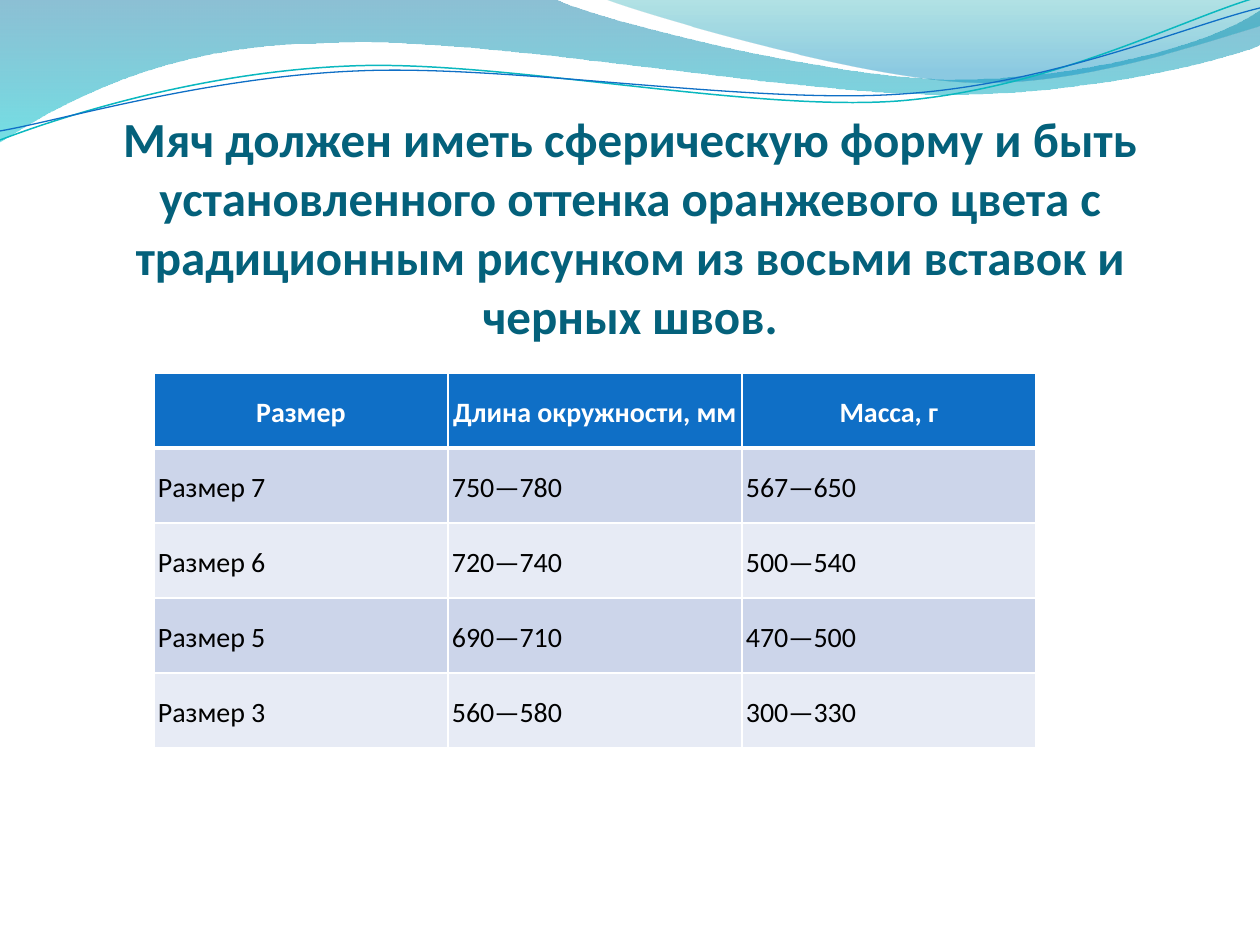
from lxml.etree import SubElement
from pptx import Presentation
from pptx.dml.color import RGBColor
from pptx.enum.text import MSO_ANCHOR as Anchor, MSO_AUTO_SIZE as AutoSize, PP_ALIGN as Align
from pptx.oxml.ns import qn
from pptx.util import Emu, Pt

EMU_PER_PX = 914400 / 126

TITLE = ("Мяч должен иметь сферическую форму и быть установленного оттенка "
         "оранжевого цвета с традиционным рисунком из восьми вставок и черных швов.")
BALL_SIZES = [
    ["Размер", "Длина окружности, мм", "Масса, г"],
    ["Размер 7", "750—780", "567—650"],
    ["Размер 6", "720—740", "500—540"],
    ["Размер 5", "690—710", "470—500"],
    ["Размер 3", "560—580", "300—330"],
]

# Each segment is one point for a line or three points for a Bézier curve.
LEFT_WAVE = [
    [(0, -1)], [(554, -1)],
    [(600, 21), (837, 79), (955, 79)], [(1075, 79), (1207, 47), (1260, 11)],
    [(1261, 45)],
    [(1239, 55), (1096, 96), (940, 94)], [(784, 94), (481, 35), (324, 43)],
    [(163, 44), (58, 105), (-1, 142)],
]
RIGHT_WAVE = [
    [(604, -1)],
    [(641, 14), (859, 78), (969, 82)], [(1079, 87), (1211, 40), (1260, 26)],
    [(1260, 0)],
]
TEAL_LINE = [
    [(0, 140)],
    [(60, 117), (199, 72), (349, 66)], [(498, 59), (747, 112), (898, 101)],
    [(1050, 89), (1182, 19), (1258, -3)],
]
BLUE_LINE = [
    [(0, 131)],
    [(59, 121), (207, 77), (357, 71)], [(508, 64), (752, 105), (903, 94)],
    [(1053, 84), (1186, 26), (1260, 8)],
]


def px(length):
    return Emu(round(length * EMU_PER_PX))


def rgb(color):
    return RGBColor.from_string(color)


class SlideBuilder:
    font = "Calibri"
    title_color = "04617B"
    header_fill = "0F6FC6"
    band_fills = ["E7EBF5", "CCD5EA"]
    border_color = "FFFFFF"

    def __init__(self, slide):
        self.slide = slide

    def format_runs(self, paragraph, size, color, bold):
        for run in paragraph.runs:
            run.font.name = self.font
            run.font.size = Pt(size)
            run.font.bold = bold
            run.font.color.rgb = rgb(color)

    def curve(self, segments, closed):
        """Draw the outline as lines, then turn its three-point segments into curves."""
        points = [point for segment in segments for point in segment]
        builder = self.slide.shapes.build_freeform(*points[0], scale=EMU_PER_PX)
        builder.add_line_segments(points[1:], close=closed)
        shape = builder.convert_to_shape()
        shape.shadow.inherit = False
        steps = iter(list(shape._element.iter(qn("a:lnTo"))))
        for segment in segments[1:]:
            first, *others = [next(steps) for _ in segment]
            if others:
                first.tag = qn("a:cubicBezTo")
                for step in others:
                    first.append(step[0])
                    step.getparent().remove(step)
        return shape

    def wave(self, segments, stops):
        """Fill a shape from top to bottom; stops are (position, colour, opacity %)."""
        shape = self.curve(segments, closed=True)
        shape.line.fill.background()
        shape.fill.gradient()
        shape.fill.gradient_angle = 270
        for stop, (position, color, opacity) in zip(shape.fill.gradient_stops, stops):
            stop.position = position
            stop.color.rgb = rgb(color)
        for node, (_, _, opacity) in zip(shape._element.spPr.iter(qn("a:srgbClr")), stops):
            SubElement(node, qn("a:alpha"), val=str(opacity * 1000))

    def wave_line(self, segments, color, width):
        shape = self.curve(segments, closed=False)
        shape.fill.background()
        shape.line.color.rgb = rgb(color)
        shape.line.width = Pt(width)

    def title(self, text, left, top, width, height):
        title = self.slide.shapes.title
        self.slide.shapes._spTree.append(title._element)  # in front of the waves
        title.left, title.top, title.width, title.height = map(px, (left, top, width, height))
        frame = title.text_frame
        frame.text = text
        frame.word_wrap = True
        frame.auto_size = AutoSize.NONE
        frame.vertical_anchor = Anchor.BOTTOM
        frame.margin_left = frame.margin_right = frame.margin_bottom = 0
        frame.margin_top = px(6)
        frame.paragraphs[0].alignment = Align.CENTER
        self.format_runs(frame.paragraphs[0], 28, self.title_color, True)

    def cell_borders(self, cell, widths):
        """Widths are in points, keyed by side: L, R, T, B."""
        properties = cell._tc.get_or_add_tcPr()
        for side, width in widths.items():
            line = SubElement(properties, qn(f"a:ln{side}"), w=str(Pt(width)))
            SubElement(SubElement(line, qn("a:solidFill")), qn("a:srgbClr"), val=self.border_color)

    def table(self, rows, left, top, column_width, row_height):
        columns = len(rows[0])
        table = self.slide.shapes.add_table(
            len(rows), columns, px(left), px(top),
            px(column_width * columns), px(row_height * len(rows))).table
        for column in table.columns:
            column.width = px(column_width)
        for r, values in enumerate(rows):
            table.rows[r].height = px(row_height)
            for c, value in enumerate(values):
                self.table_cell(table.cell(r, c), value, r)

    def table_cell(self, cell, value, row):
        header = row == 0
        self.cell_borders(cell, {"L": 1, "R": 1, "T": 3 if row == 1 else 1, "B": 3 if header else 1})
        cell.fill.solid()
        cell.fill.fore_color.rgb = rgb(self.header_fill if header else self.band_fills[row % 2])
        cell.margin_left = cell.margin_right = px(4)
        cell.margin_top = cell.margin_bottom = px(1)
        cell.vertical_anchor = Anchor.MIDDLE
        cell.text_frame.text = value
        paragraph = cell.text_frame.paragraphs[0]
        paragraph.alignment = Align.CENTER if header else Align.LEFT
        paragraph.line_spacing = 1.15
        paragraph.space_after = Pt(10)
        self.format_runs(paragraph, 16, "FFFFFF" if header else "000000", header)


def main():
    deck = Presentation()
    deck.slide_width, deck.slide_height = px(1260), px(945)
    title_only = deck.slide_layouts[5]
    builder = SlideBuilder(deck.slides.add_slide(title_only))

    builder.wave(LEFT_WAVE, [(0, "0074A1", 45), (1, "00C6CF", 55)])
    builder.wave(RIGHT_WAVE, [(0, "00A1A9", 30), (0.8, "008BBF", 45)])
    builder.wave_line(TEAL_LINE, "0AB8BF", 0.85)
    builder.wave_line(BLUE_LINE, "0F6FC6", 0.75)
    builder.title(TITLE, 63, 38, 1134, 306)
    builder.table(BALL_SIZES, left=154, top=373, column_width=294, row_height=75)

    deck.save("out.pptx")


if __name__ == "__main__":
    main()
